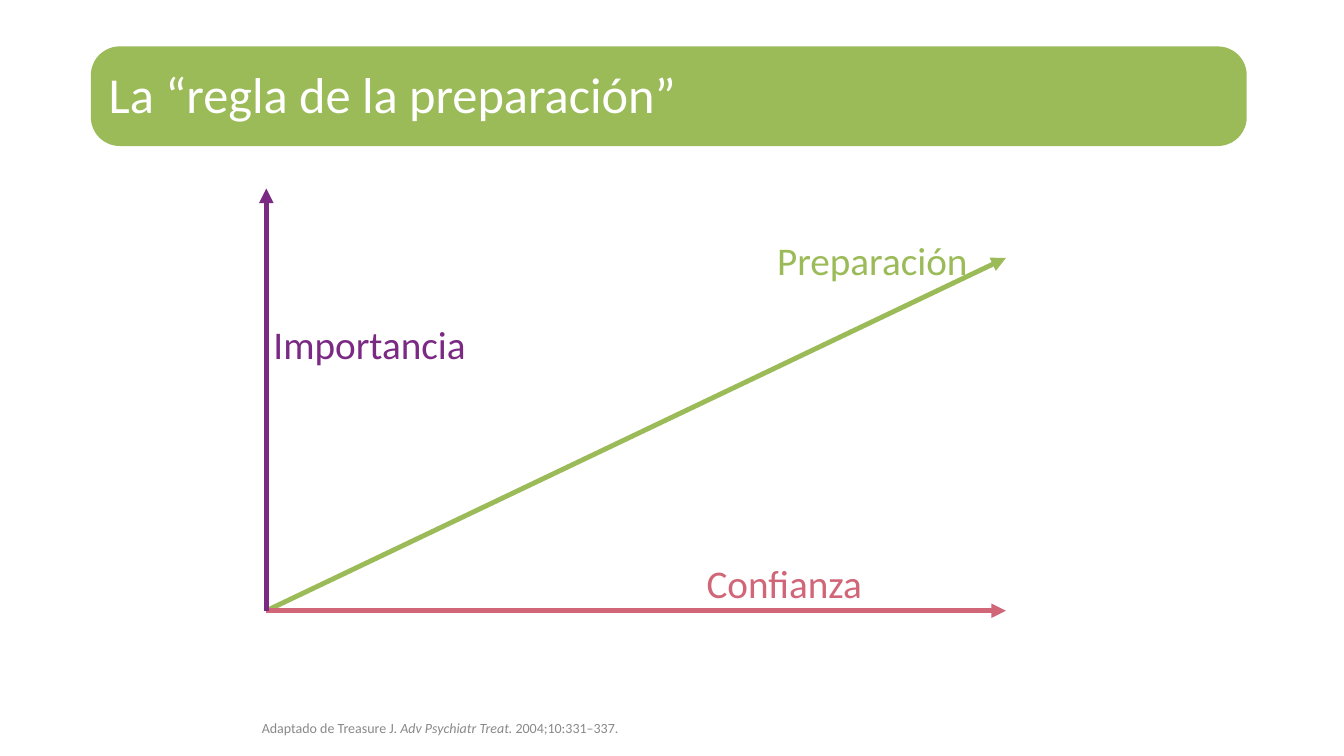
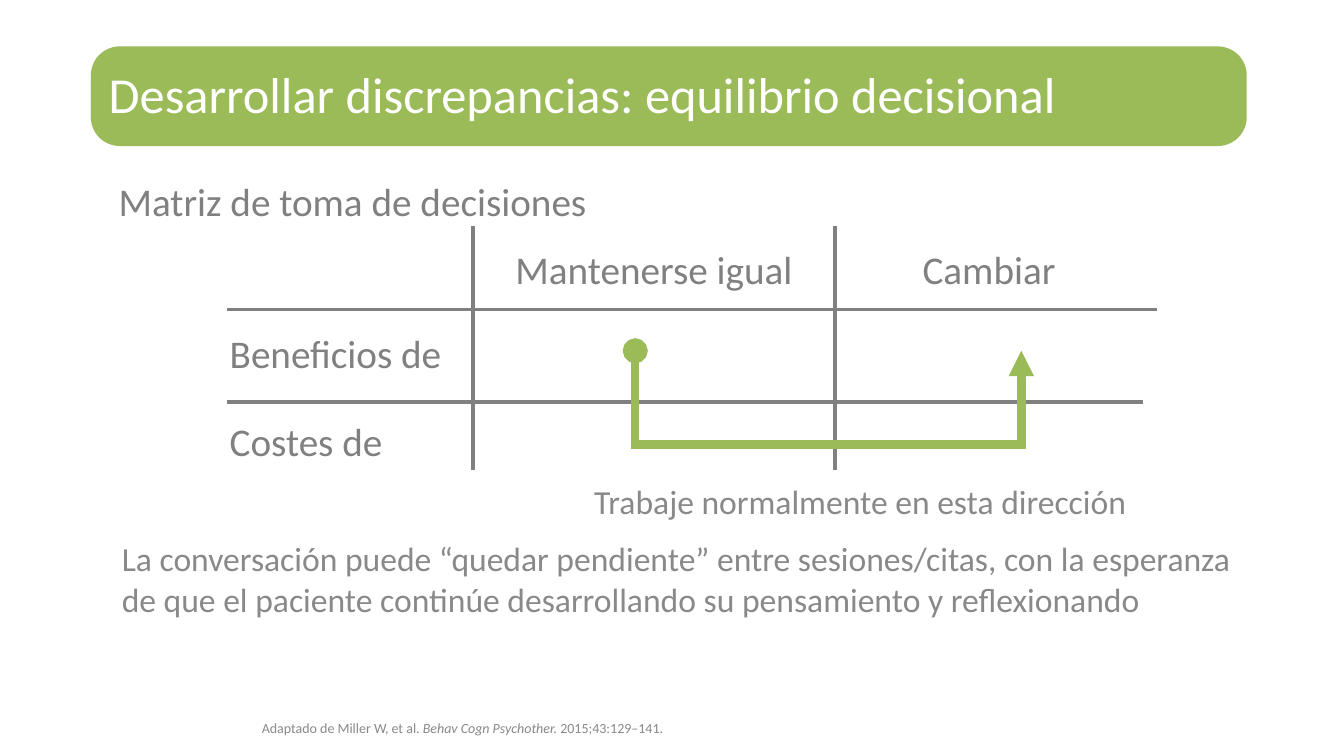
from lxml import etree
from pptx import Presentation
from pptx.dml.color import RGBColor
from pptx.enum.shapes import MSO_CONNECTOR as CONNECTOR, MSO_SHAPE as SHAPE
from pptx.enum.text import MSO_ANCHOR as ANCHOR, MSO_AUTO_SIZE as AUTO_SIZE, PP_ALIGN as ALIGN
from pptx.oxml.ns import qn
from pptx.util import Cm, Pt

FONT = "Calibri"
GREEN, PURPLE, ROSE = "9BBB59", "7B2A84", "D16678"
GRAY, LIGHT_GRAY, WHITE = "808080", "898989", "FFFFFF"
LABEL_HEIGHT = 1.45

# Boxes in centimetres: left, top, width, height
BAND = (2.29, 1.17, 29.13, 2.51)
TITLE = (2.74, 1.57, 28.4, 1.83)
CITATION = (6.6, 16.41, 24.94, 2.16)
AXES = (6.71, 4.75, 18.64, 10.64)
MATRIX = (5.72, 5.69, 23.09, 6.15)


def color(hex_text):
    return RGBColor.from_string(hex_text)


def place(shape, box):
    shape.left, shape.top, shape.width, shape.height = map(Cm, box)


def style_text(paragraph, size, hex_text, align=ALIGN.LEFT):
    paragraph.alignment = align
    paragraph.font.name = FONT
    paragraph.font.size = Pt(size)
    paragraph.font.color.rgb = color(hex_text)


def remove_margins(frame):
    frame.margin_left = frame.margin_top = frame.margin_right = frame.margin_bottom = 0


def style_line(shape, hex_text, width, head=None, tail=None):
    shape.line.color.rgb = color(hex_text)
    shape.line.width = Pt(width)
    line = shape.line._get_or_add_ln()
    etree.SubElement(line, qn("a:miter"), lim="800000")
    for tag, kind in (("a:headEnd", head), ("a:tailEnd", tail)):
        if kind:
            etree.SubElement(line, qn(tag), type=kind)


def add_text(slide, box, text, size, hex_text, align=ALIGN.LEFT):
    shape = slide.shapes.add_textbox(*map(Cm, box))
    shape.text_frame.word_wrap = True
    paragraph = shape.text_frame.paragraphs[0]
    paragraph.text = text
    style_text(paragraph, size, hex_text, align)
    return shape


def add_line(slide, start, end, hex_text, width, tail=None):
    line = slide.shapes.add_connector(CONNECTOR.STRAIGHT, *map(Cm, (*start, *end)))
    style_line(line, hex_text, width, tail=tail)
    etree.SubElement(line._element.spPr, qn("a:effectLst"))


def add_layout_band(slide, box):
    """Draw the title band and move it to the layout that the slides share."""
    band = slide.shapes.add_shape(SHAPE.ROUNDED_RECTANGLE, *map(Cm, box))
    band.adjustments[0] = 0.29
    band.shadow.inherit = False
    band.fill.solid()
    band.fill.fore_color.rgb = color(GREEN)
    band.line.fill.background()
    slide.slide_layout.shapes._spTree.insert(2, band._element)


def set_title(slide, box, text):
    title = slide.shapes.title
    place(title, box)
    frame = title.text_frame
    frame.text = text
    frame.auto_size = AUTO_SIZE.NONE
    frame.vertical_anchor = ANCHOR.MIDDLE
    remove_margins(frame)
    paragraph = frame.paragraphs[0]
    paragraph.line_spacing = 0.8
    style_text(paragraph, 36, WHITE)


def add_citation(slide, box, authors, journal, reference):
    frame = add_text(slide, box, authors, 10, LIGHT_GRAY).text_frame
    frame.vertical_anchor = ANCHOR.BOTTOM
    remove_margins(frame)
    paragraph = frame.paragraphs[0]
    paragraph.line_spacing = 0.9
    for text, italic in ((journal, True), (reference, False)):
        run = paragraph.add_run()
        run.text = text
        run.font.italic = italic


def add_axes(slide, box):
    left, top, width, height = box
    right, bottom = left + width, top + height
    origin = (left, bottom)
    for tip, hex_text in (((right, top + 1.75), GREEN),
                          ((right, bottom), ROSE),
                          ((left, top), PURPLE)):
        add_line(slide, origin, tip, hex_text, 3.5, tail="triangle")
    for text, x, y, label_width, hex_text in (
            ("Importancia", -0.2, 3.2, 5.61, PURPLE),
            ("Confianza", 9.98, 9.22, 6.15, ROSE),
            ("Preparación", 12.47, 1.07, 5.61, GREEN)):
        add_text(slide, (left + x, top + y, label_width, LABEL_HEIGHT),
                 text, 28, hex_text, ALIGN.CENTER)


def add_matrix(slide, box):
    left, top, width, height = box
    right, bottom = left + width, top + height
    columns = (left + 6.2, left + 15.32, right)

    for text, start, end in zip(("Mantenerse igual", "Cambiar"), columns, columns[1:]):
        add_text(slide, (start, top + 0.36, end - start, LABEL_HEIGHT),
                 text, 28, GRAY, ALIGN.CENTER)
    for text, y in (("Beneficios de", 2.49), ("Costes de", 4.7)):
        add_text(slide, (left - 0.18, top + y, 6.38, LABEL_HEIGHT), text, 28, GRAY)

    for x in columns[:2]:
        add_line(slide, (x, top), (x, bottom), GRAY, 2.75)
    for y, end in ((top + 2.11, right + 0.36), (top + 4.45, right)):
        add_line(slide, (left, y), (end, y), GRAY, 2.75)

    add_route(slide, (left + 10.29, top + 3.15, 9.73, 2.36))


def add_route(slide, box):
    """Draw the U-shaped arrow that leads from one cell to the next."""
    left, top, width, height = box
    right, bottom = left + width, top + height
    start, *corners = [(Cm(x), Cm(y)) for x, y in (
        (left, top), (left, bottom), (right, bottom), (right, top))]
    builder = slide.shapes.build_freeform(*start)
    builder.add_line_segments(corners, close=False)
    route = builder.convert_to_shape()
    route.shadow.inherit = False
    route.fill.background()
    style_line(route, GREEN, 6, head="oval", tail="triangle")


def build_readiness_slide(slide):
    set_title(slide, TITLE, "La “regla de la preparación”")
    add_citation(slide, CITATION, "Adaptado de Treasure J. ",
                 "Adv Psychiatr Treat.", " 2004;10:331–337.")
    add_axes(slide, AXES)


def build_balance_slide(slide):
    set_title(slide, TITLE, "Desarrollar discrepancias: equilibrio decisional")
    add_citation(slide, CITATION, "Adaptado de Miller W, et al. ",
                 "Behav Cogn Psychother. ", "2015;43:129–141.")
    add_text(slide, (2.74, 4.34, 16.94, LABEL_HEIGHT),
             "Matriz de toma de decisiones", 28, GRAY)
    add_matrix(slide, MATRIX)
    add_text(slide, (14.48, 11.99, 14.4, 1.27),
             "Trabaje normalmente en esta dirección", 24, LIGHT_GRAY, ALIGN.CENTER)
    add_text(slide, (2.82, 13.44, 29.21, 2.31),
             "La conversación puede “quedar pendiente” entre sesiones/citas, con la "
             "esperanza de que el paciente continúe desarrollando su pensamiento y "
             "reflexionando", 24, LIGHT_GRAY)


def main():
    presentation = Presentation()
    presentation.slide_width, presentation.slide_height = Cm(33.87), Cm(19.05)
    layout = presentation.slide_layouts.get_by_name("Title Only")
    readiness, balance = [presentation.slides.add_slide(layout) for _ in range(2)]
    add_layout_band(readiness, BAND)
    build_readiness_slide(readiness)
    build_balance_slide(balance)
    presentation.save("out.pptx")


if __name__ == "__main__":
    main()
